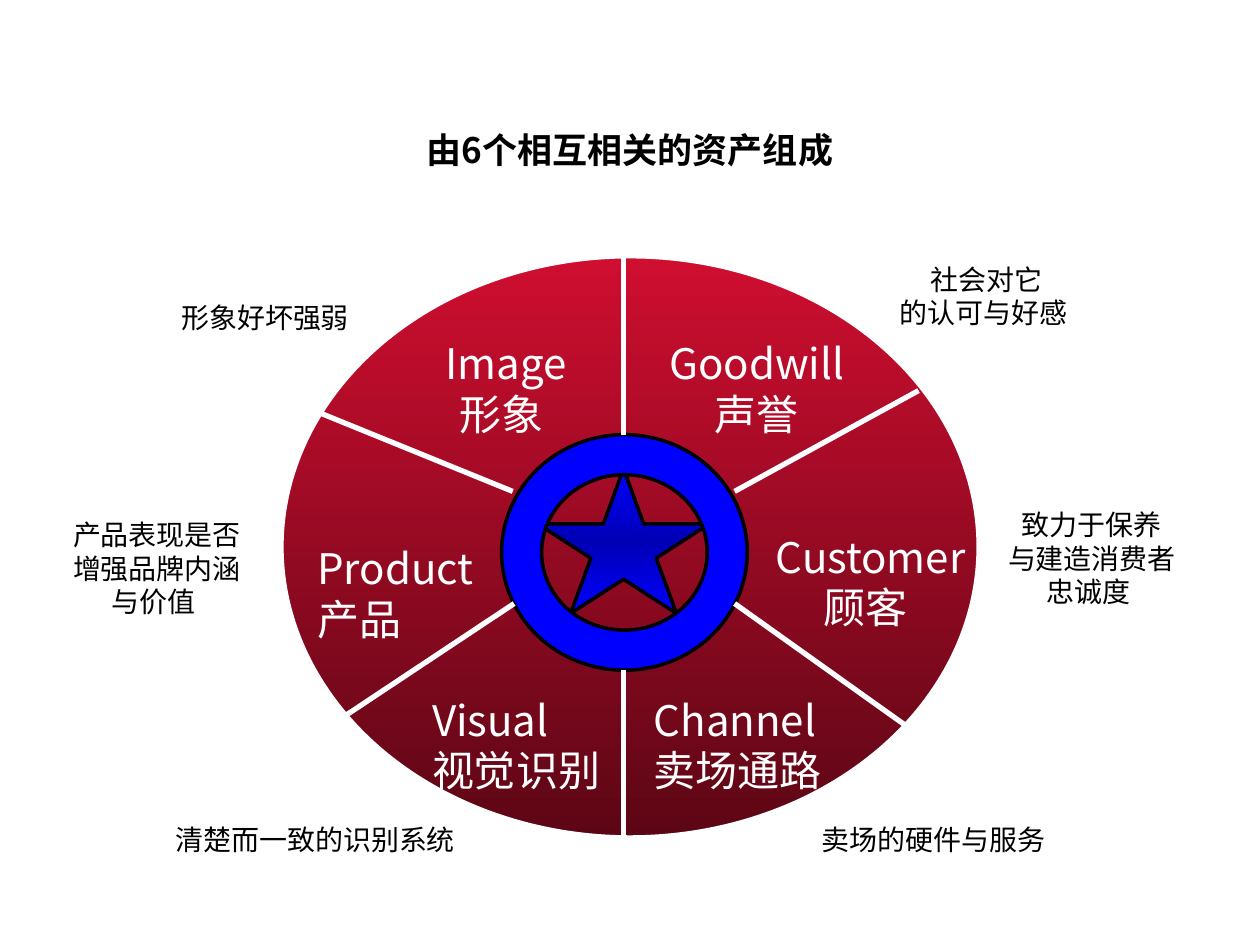
from copy import deepcopy
from typing import NamedTuple

from pptx import Presentation
from pptx import util as u
from pptx.dml.color import RGBColor
from pptx.enum import shapes, text
from pptx.oxml.ns import qn

FONT = "Noto Sans CJK SC"
HUES = {"white": "FFFFFF", "black": "000000", "blue": "0000FF",
        "navy": "0000B6", "red": "CF0E30", "wine": "5C0615"}
MID, LEFT = text.PP_ALIGN.CENTER, text.PP_ALIGN.LEFT


class Box(NamedTuple):
    x: float
    y: float
    w: float
    h: float


class Label(NamedTuple):
    words: str
    box: Box
    align: text.PP_ALIGN = MID
    wrap: bool = False


class Spoke(NamedTuple):
    x1: float
    y1: float
    x2: float
    y2: float


# Names of the six assets, inside the wheel
ASSETS = [
    Label("Image\n形象 ", Box(243.4, 189.4, 91.4, 65.5)),
    Label("Goodwill\n声誉", Box(373, 189.4, 118.8, 65.5)),
    Label("Product\n产品", Box(174.2, 306.7, 107.3, 65.5), LEFT),
    Label("Customer\n顾客 ", Box(433.4, 300.2, 128.2, 65.5)),
    Label("Channel\n卖场通路", Box(366.5, 393.1, 117.4, 65.5), LEFT),
    Label("Visual\n视觉识别", Box(239.8, 393.1, 117.4, 65.5), LEFT),
]

# Remarks around the wheel
NOTES = [
    Label("社会对它\n的认可与好感 ", Box(506.2, 146.2, 115.2, 46)),
    Label("形象好坏强弱 ", Box(95.8, 168.5, 115.2, 26.6)),
    Label("产品表现是否\n增强品牌内涵\n与价值 ", Box(33.8, 292.3, 111.6, 65.5), wrap=True),
    Label("致力于保养\n与建造消费者\n忠诚度 ", Box(568.1, 286.6, 111.6, 67.7)),
    Label("卖场的硬件与服务 ", Box(461.5, 466.6, 147.6, 26.6)),
    Label("清楚而一致的识别系统 ", Box(50.4, 466.6, 263.5, 26.6), wrap=True),
]

SPOKES = [
    Spoke(356.4, 146.2, 356.4, 248.4),
    Spoke(356.4, 383, 356.4, 478.8),
    Spoke(293, 280.8, 181.4, 235.4),
    Spoke(419.8, 280.8, 524.9, 223.2),
    Spoke(419.8, 344.9, 517.7, 414.7),
    Spoke(197.3, 409, 293.8, 344.9),
]


def hue(name: str) -> RGBColor:
    return RGBColor.from_string(HUES[name])


def pts(nums: tuple) -> list:
    return [u.Pt(n) for n in nums]


def style(frame, size: float, tint: str, align, bold: bool = False) -> None:
    for para in frame.paragraphs:
        para.alignment = align
        for run in para.runs:
            font = run.font
            font.name, font.size, font.bold = FONT, u.Pt(size), bold
            font.color.rgb = hue(tint)
            east = font._element.makeelement(qn("a:ea"), {"typeface": FONT})
            font._element.find(qn("a:latin")).addnext(east)


def write(host, label: Label, size: float, tint: str) -> None:
    frame = host.add_textbox(*pts(label.box)).text_frame
    frame.text = label.words
    frame.word_wrap = label.wrap
    frame.auto_size = text.MSO_AUTO_SIZE.SHAPE_TO_FIT_TEXT
    style(frame, size, tint, label.align)


def paint(fill, names: list[str]) -> None:
    """Fill solid with one colour, or top to bottom with several."""
    if len(names) == 1:
        fill.solid()
        fill.fore_color.rgb = hue(names[0])
        return
    fill.gradient()
    fill.gradient_angle = 270
    last = fill.gradient_stops[-1]._gs
    for _ in names[2:]:
        last.addnext(deepcopy(last))
    for i, (stop, name) in enumerate(zip(fill.gradient_stops, names)):
        stop.color.rgb = hue(name)
        stop.position = i / (len(names) - 1)


def form(host, kind, box: Box, names: list[str], edge: str, width: float):
    item = host.add_shape(kind, *pts(box))
    item.shadow.inherit = False
    paint(item.fill, names)
    item.line.color.rgb = hue(edge)
    item.line.width = u.Pt(width)
    return item


def split(host, spoke: Spoke) -> None:
    line = host.add_connector(shapes.MSO_CONNECTOR.STRAIGHT, *pts(spoke))
    line.line.color.rgb = hue("white")
    line.line.width = u.Pt(3)
    props = line._element.spPr
    props.append(props.makeelement(qn("a:effectLst"), {}))


def main() -> None:
    deck = Presentation()
    deck.slide_width, deck.slide_height = u.Pt(720), u.Pt(540)
    slide = deck.slides.add_slide(deck.slide_layouts[5])

    # Title
    title = slide.shapes.title
    title.left, title.top, title.width, title.height = pts(Box(0, 73.4, 720, 28.1))
    title.text_frame.text = "由6个相互相关的资产组成"
    title.text_frame.paragraphs[0].line_spacing = 0.85
    style(title.text_frame, 20, "black", MID, bold=True)

    # Wheel with star and ring at its hub
    wheel = slide.shapes.add_group_shape().shapes
    kinds = shapes.MSO_SHAPE
    form(wheel, kinds.OVAL, Box(160.6, 146.2, 398.9, 332.6), ["red", "wine"], "white", 3)
    form(wheel, kinds.STAR_5_POINT, Box(307.4, 267.8, 97.9, 82.8),
         ["blue", "navy", "blue"], "black", 2)
    ring = form(wheel, kinds.DONUT, Box(286.6, 248.4, 140.4, 134.6), ["blue"], "black", 2)
    ring.adjustments[0] = 0.17
    for spoke in SPOKES:
        split(wheel, spoke)
    for label in ASSETS:
        write(wheel, label, 24, "white")

    # Remarks
    for label in NOTES:
        write(slide.shapes, label, 16, "black")

    deck.save("out.pptx")


if __name__ == "__main__":
    main()
